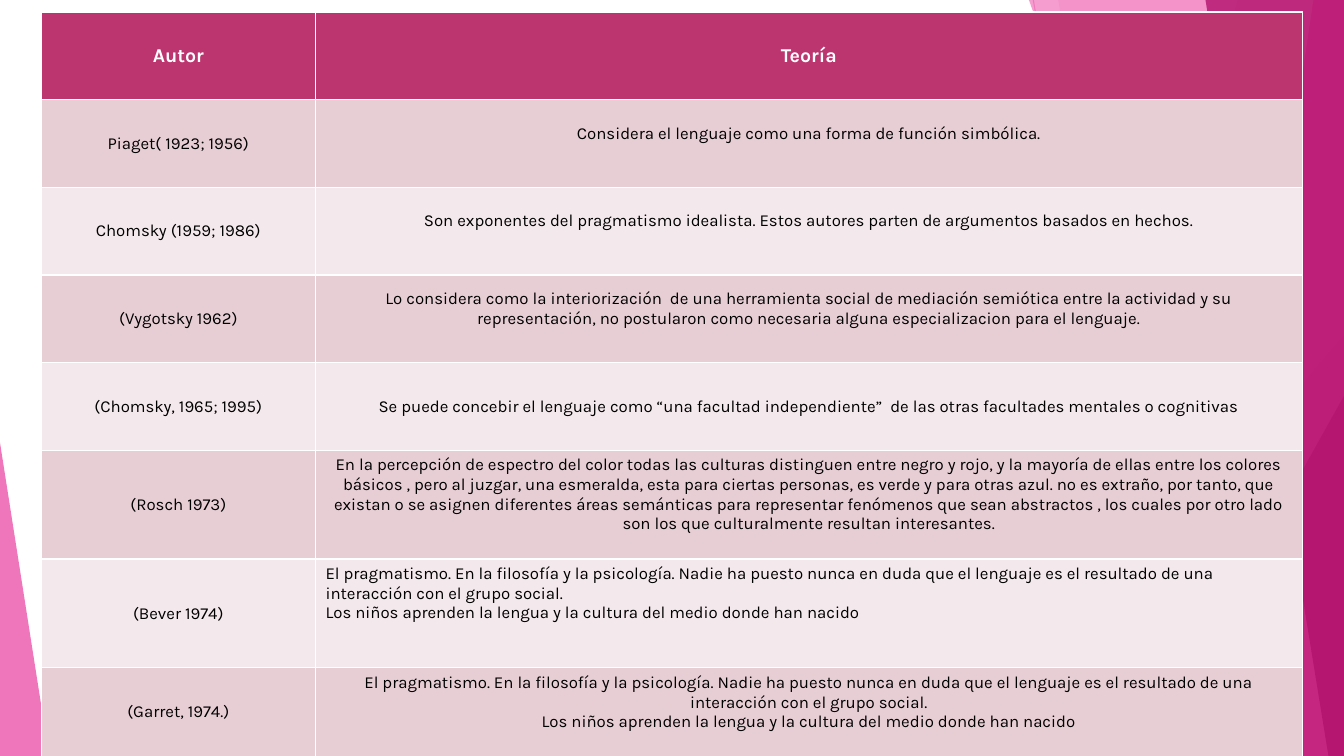
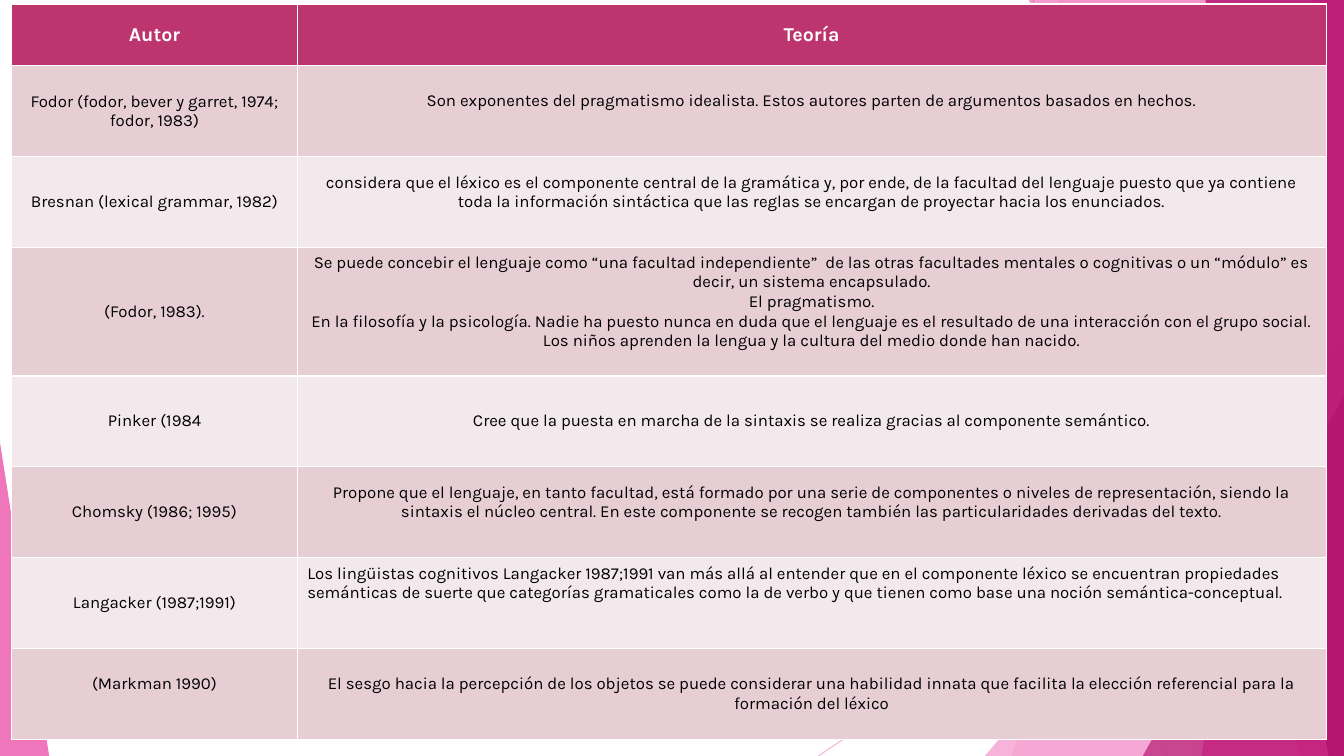
from dataclasses import dataclass

from lxml import etree
from pptx import Presentation
from pptx.dml.color import RGBColor
from pptx.enum import shapes, text
from pptx.oxml import ns
from pptx.util import Cm, Pt

WIDTH, HEIGHT = 33.87, 19.05
FONT = "Karla"
WHITE = RGBColor(0xFF, 0xFF, 0xFF)
BLACK = RGBColor(0, 0, 0)
HEADER = RGBColor(0xBC, 0x35, 0x6F)
ROW_FILLS = (RGBColor(0xE7, 0xCE, 0xD5), RGBColor(0xF3, 0xE8, 0xEB))
PALE_PINK = RGBColor(0xF4, 0x96, 0xCB)
PINK = RGBColor(0xEB, 0x3D, 0x9F)
MAGENTA = RGBColor(0xB2, 0x13, 0x6D)
CENTER, LEFT = text.PP_ALIGN.CENTER, text.PP_ALIGN.LEFT
MARGIN = 0.13
TEXT_LINE = 0.5

PRAGMATISM = (
    "En la filosofía y la psicología. Nadie ha puesto nunca en duda que el lenguaje "
    "es el resultado de una interacción con el grupo social.\n"
    "Los niños aprenden la lengua y la cultura del medio donde han nacido"
)
IDEALISM = (
    "Son exponentes del pragmatismo idealista. Estos autores parten de argumentos "
    "basados en hechos."
)
FACULTY = (
    "Se puede concebir el lenguaje como “una facultad independiente”  de las otras "
    "facultades mentales o cognitivas"
)


@dataclass
class Theory:
    """One row; the lifts raise its texts, in half lines above the middle."""
    author: str
    summary: str
    lift: int = 1
    author_lift: int = 0
    align: text.PP_ALIGN = CENTER
    height: float = 0


FIRST_THEORIES = [
    Theory("Piaget( 1923; 1956)",
           "Considera el lenguaje como una forma de función simbólica."),
    Theory("Chomsky (1959; 1986)", IDEALISM),
    Theory("(Vygotsky 1962)",
           "Lo considera como la interiorización  de una herramienta social de mediación "
           "semiótica entre la actividad y su representación, no postularon como necesaria "
           "alguna especializacion para el lenguaje."),
    Theory("(Chomsky, 1965; 1995)", FACULTY, lift=0),
    Theory("(Rosch 1973)",
           "En la percepción de espectro del color todas las culturas distinguen entre negro "
           "y rojo, y la mayoría de ellas entre los colores básicos , pero al juzgar, una "
           "esmeralda, esta para ciertas personas, es verde y para otras azul. no es extraño, "
           "por tanto, que existan o se asignen diferentes áreas semánticas para representar "
           "fenómenos que sean abstractos , los cuales por otro lado son los que culturalmente "
           "resultan interesantes.", height=2.71),
    Theory("(Bever 1974)", "El pragmatismo. " + PRAGMATISM,
           lift=2, align=LEFT, height=2.71),
    Theory("(Garret, 1974.)", "El pragmatismo. " + PRAGMATISM),
]
SECOND_THEORIES = [
    Theory("Fodor (fodor, bever y garret, 1974; fodor, 1983)", IDEALISM),
    Theory("Bresnan (lexical grammar, 1982)",
           "considera que el léxico es el componente central de la gramática y, por ende, de "
           "la facultad del lenguaje puesto que ya contiene toda la información sintáctica que "
           "las reglas se encargan de proyectar hacia los enunciados."),
    Theory("(Fodor, 1983).",
           FACULTY + " o un “módulo” es decir, un sistema encapsulado.\n"
           "El pragmatismo.\n" + PRAGMATISM + ".", height=3.2),
    Theory("Pinker (1984",
           "Cree que la puesta en marcha de la sintaxis se realiza gracias al componente "
           "semántico.", lift=0),
    Theory("Chomsky (1986; 1995)",
           "Propone que el lenguaje, en tanto facultad, está formado por una serie de "
           "componentes o niveles de representación, siendo la sintaxis el núcleo central. En "
           "este componente se recogen también las particularidades derivadas del texto."),
    Theory("Langacker (1987;1991)",
           "Los lingüistas cognitivos Langacker 1987;1991 van más allá al entender que en el "
           "componente léxico se encuentran propiedades semánticas de suerte que categorías "
           "gramaticales como la de verbo y que tienen como base una noción "
           "semántica-conceptual.", lift=2, align=LEFT),
    Theory("(Markman 1990)",
           "El sesgo hacia la percepción de los objetos se puede considerar una habilidad "
           "innata que facilita la elección referencial para la formación del léxico",
           lift=0, author_lift=1),
]


def set_opacity(shape, percent):
    for color in shape.element.spPr.iter(ns.qn("a:srgbClr")):
        etree.SubElement(color, ns.qn("a:alpha"), val=str(percent * 1000))


def paint(shape, color, opacity):
    shape.shadow.inherit = False
    shape.fill.solid()
    shape.fill.fore_color.rgb = color
    shape.line.fill.background()
    set_opacity(shape, opacity)


def add_ray(page, start, end):
    ray = page.shapes.add_connector(
        shapes.MSO_CONNECTOR.STRAIGHT, *(Cm(value) for value in start + end))
    ray.line.color.rgb = PALE_PINK
    ray.line.width = Pt(0.75)
    set_opacity(ray, 70)
    etree.SubElement(ray.element.spPr, ns.qn("a:effectLst"))


def add_band(page, top_x, bottom_x, color, opacity):
    """Fill the page to the right of a slanted edge."""
    outline = page.shapes.build_freeform(Cm(top_x), 0)
    corners = [(WIDTH, 0), (WIDTH, HEIGHT), (bottom_x, HEIGHT)]
    outline.add_line_segments([(Cm(x), Cm(y)) for x, y in corners])
    paint(outline.convert_to_shape(), color, opacity)


def add_corner(page, left, top, width, apex, color, opacity):
    """Stand a right triangle on the bottom edge; apex is 0 (left) or 1 (right)."""
    corner = page.shapes.add_shape(
        shapes.MSO_SHAPE.ISOSCELES_TRIANGLE,
        Cm(left), Cm(top), Cm(width), Cm(HEIGHT - top))
    corner.adjustments[0] = apex
    paint(corner, color, opacity)


def draw_backdrop(page):
    add_ray(page, (26.04, 0), (29.41, HEIGHT))
    add_ray(page, (WIDTH, 10.24), (20.62, HEIGHT))
    add_band(page, 31.19, 25.5, PALE_PINK, 36)
    add_band(page, 26.67, 30.05, PALE_PINK, 20)
    add_corner(page, 24.82, 8.46, 9.05, 1, PALE_PINK, 72)
    add_band(page, 25.93, 32.79, PINK, 50)
    add_band(page, 33.1, 30.28, PINK, 70)
    add_band(page, 30.38, 33.48, MAGENTA, 80)
    add_corner(page, 28.8, 9.98, 5.07, 1, MAGENTA, 66)
    add_corner(page, 0, 11.15, 1.24, 0, PINK, 70)


def prepare_layout(deck):
    """Put the backdrop on the blank layout, where all pages share it."""
    layout = deck.slide_layouts[6]
    for holder in list(layout.placeholders):
        layout.shapes.element.remove(holder.element)
    page = deck.slides.add_slide(layout)
    draw_backdrop(page)
    for shape in list(page.shapes):
        layout.shapes.element.append(shape.element)
    return layout, page


def fill_cell(cell, words, fill, color=BLACK, size=12, bold=False, align=CENTER, lift=0):
    cell.text = words
    cell.vertical_anchor = text.MSO_ANCHOR.MIDDLE
    cell.margin_bottom = Cm(MARGIN + lift * TEXT_LINE)
    cell.fill.solid()
    cell.fill.fore_color.rgb = fill
    for para in cell.text_frame.paragraphs:
        para.alignment = align
        para.font.name = FONT
        para.font.size = Pt(size)
        para.font.bold = bold
        para.font.color.rgb = color


def add_theory_table(page, theories, left, top, widths, header_height, row_height):
    heights = [header_height] + [theory.height or row_height for theory in theories]
    table = page.shapes.add_table(
        len(heights), len(widths), Cm(left), Cm(top), Cm(sum(widths)), Cm(sum(heights))).table
    for column, width in zip(table.columns, widths):
        column.width = Cm(width)
    for row, height in zip(table.rows, heights):
        row.height = Cm(height)
    for column, heading in enumerate(("Autor", "Teoría")):
        fill_cell(table.cell(0, column), heading, HEADER, WHITE, 14, True)
    for index, theory in enumerate(theories):
        fill = ROW_FILLS[index % 2]
        fill_cell(table.cell(index + 1, 0), theory.author, fill, lift=theory.author_lift)
        fill_cell(table.cell(index + 1, 1), theory.summary, fill,
                  align=theory.align, lift=theory.lift)


def main():
    deck = Presentation()
    deck.slide_width, deck.slide_height = Cm(WIDTH), Cm(HEIGHT)
    layout, first = prepare_layout(deck)
    add_theory_table(first, FIRST_THEORIES, 1.04, 0.3, (6.91, 24.87), 2.21, 2.21)
    second = deck.slides.add_slide(layout)
    add_theory_table(second, SECOND_THEORIES, 0.3, 0.1, (7.19, 25.93), 1.56, 2.29)
    deck.save("out.pptx")


if __name__ == "__main__":
    main()
